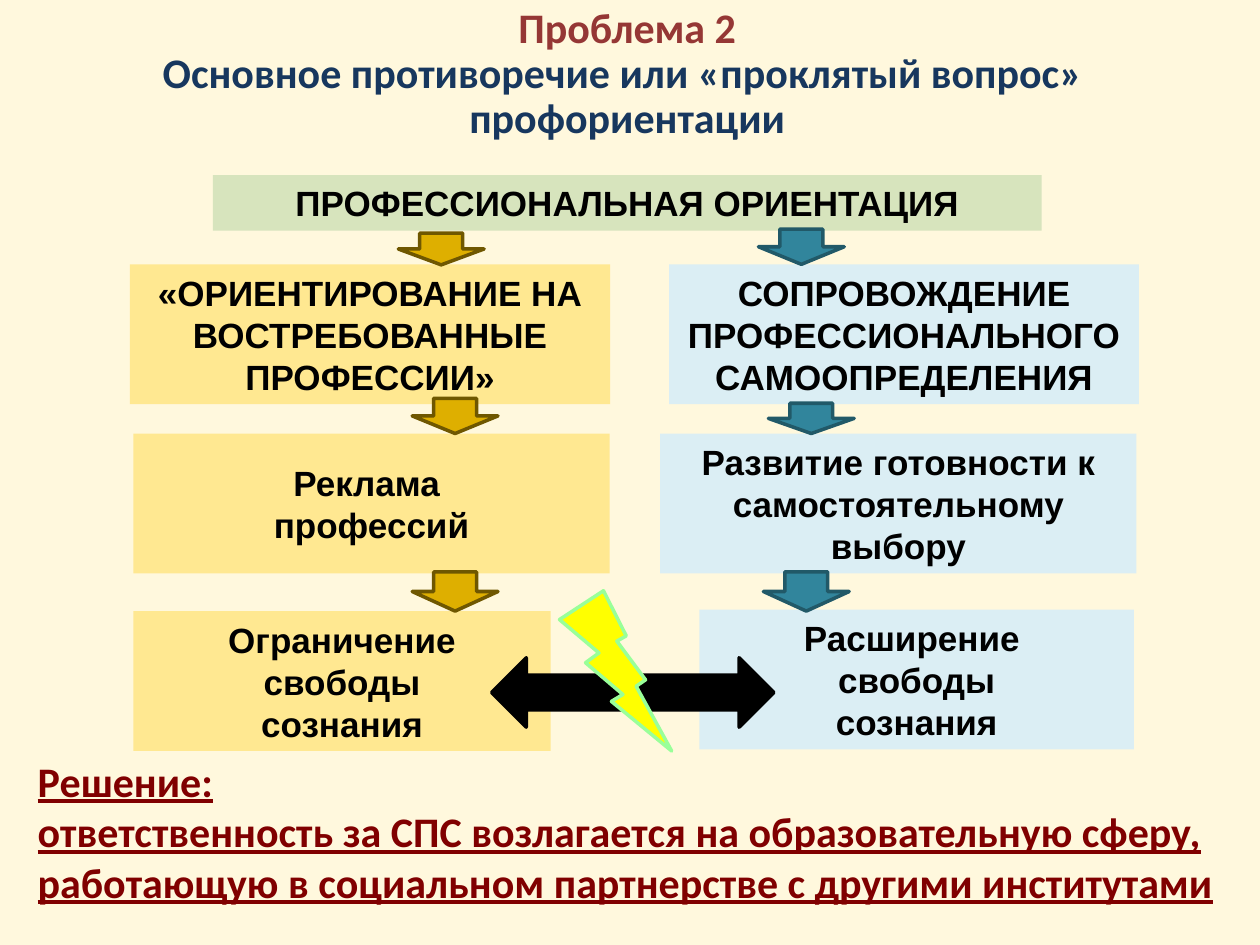
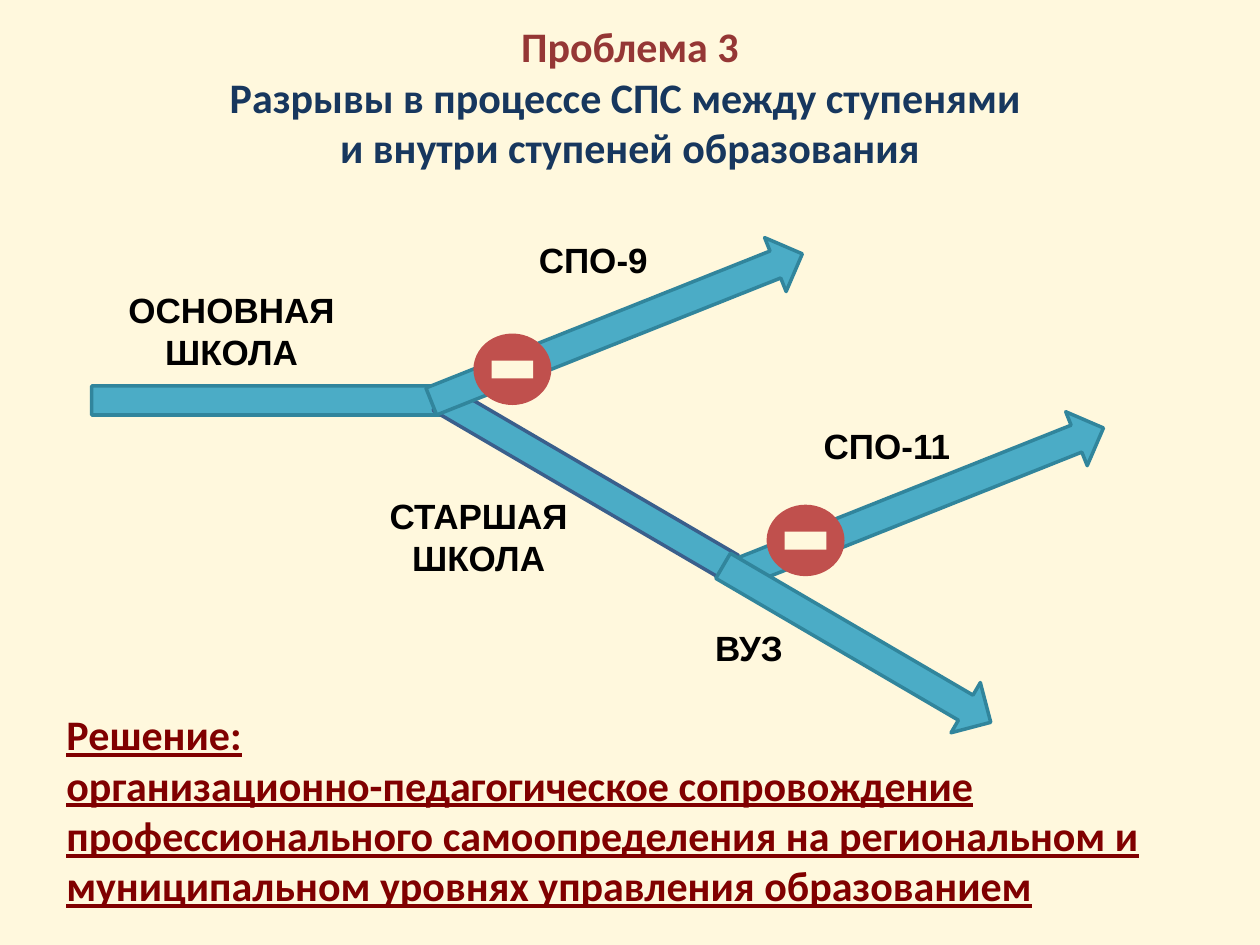
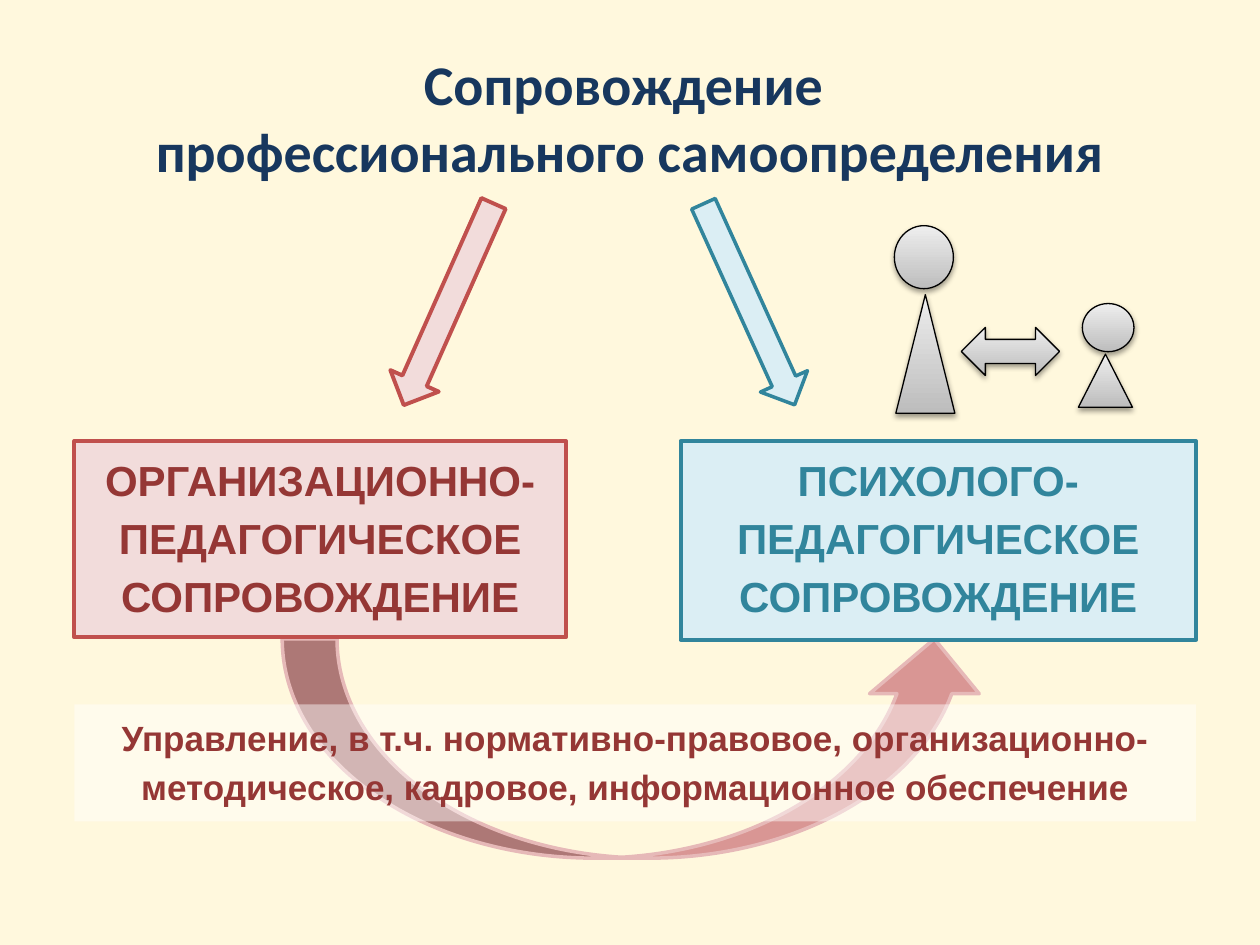
from typing import NamedTuple, Optional

from lxml import etree
from pptx import Presentation
from pptx.dml.color import RGBColor
from pptx.enum.shapes import MSO_SHAPE
from pptx.enum.text import MSO_ANCHOR, MSO_AUTO_SIZE, PP_ALIGN
from pptx.oxml.ns import qn
from pptx.util import Cm, Pt

RECT, OVAL, TRIANGLE = MSO_SHAPE.RECTANGLE, MSO_SHAPE.OVAL, MSO_SHAPE.ISOSCELES_TRIANGLE
DOWN, RIGHT = MSO_SHAPE.DOWN_ARROW, MSO_SHAPE.RIGHT_ARROW
LEFT_RIGHT, CURVED_UP = MSO_SHAPE.LEFT_RIGHT_ARROW, MSO_SHAPE.CURVED_UP_ARROW
BOLT = MSO_SHAPE.LIGHTNING_BOLT
CENTER, LEFT = PP_ALIGN.CENTER, PP_ALIGN.LEFT
MIDDLE, TOP = MSO_ANCHOR.MIDDLE, MSO_ANCHOR.TOP

COLORS = {
    "background": "FFF8DD", "black": "000000", "white": "FFFFFF",
    "problem": "953735", "title": "17375E", "solution": "800000",
    "green": "D7E4BD", "yellow": "FFE891", "pale_blue": "DBEEF4",
    "gold": "DEAF00", "dark_gold": "6F5700",
    "teal": "31859C", "dark_teal": "215968",
    "bolt": "FFFF00", "bolt_edge": "99FF99",
    "route": "4BACC6", "school_edge": "3A5F8C",
    "red": "C0504D", "pink": "F2DCDB", "rose": "D99694", "rose_edge": "E6B9B8",
    "grey_dark": "BDBDBD", "grey_light": "EEEEEE",
}


class Box(NamedTuple):
    """Position and size in centimetres."""
    left: float
    top: float
    width: float
    height: float


class Figure(NamedTuple):
    kind: int
    box: Box
    fill: str
    line: Optional[str] = None
    weight: float = 2
    rotation: float = 0


class Label(NamedTuple):
    box: Box
    lines: tuple
    fill: Optional[str] = None


def rgb(name: str) -> RGBColor:
    return RGBColor.from_string(COLORS[name])


def place(sp, box: Box) -> None:
    sp.left, sp.top, sp.width, sp.height = (Cm(v) for v in box)


def draw(slide, fig: Figure):
    sp = slide.shapes.add_shape(fig.kind, *(Cm(v) for v in fig.box))
    sp.shadow.inherit = False
    sp.rotation = fig.rotation
    sp.fill.solid()
    sp.fill.fore_color.rgb = rgb(fig.fill)
    if fig.line:
        sp.line.color.rgb = rgb(fig.line)
        sp.line.width = Pt(fig.weight)
    else:
        sp.line.fill.background()
    return sp


def write(sp, lines: tuple, size: float, color: str, font: str = "Arial",
          align=CENTER, anchor=MIDDLE, spacing: float = 1, underline: bool = False) -> None:
    """Fill a shape with bold paragraphs of one style."""
    tf = sp.text_frame
    tf.word_wrap = True
    tf.vertical_anchor = anchor
    for i, line in enumerate(lines):
        p = tf.add_paragraph() if i else tf.paragraphs[0]
        p.text = line
        p.alignment = align
        p.line_spacing = spacing
        p.font.name, p.font.size, p.font.bold = font, Pt(size), True
        p.font.underline = underline
        p.font.color.rgb = rgb(color)


def add_label(slide, label: Label) -> None:
    if label.fill:
        sp = draw(slide, Figure(RECT, label.box, label.fill))
    else:
        sp = slide.shapes.add_textbox(*(Cm(v) for v in label.box))
    write(sp, label.lines, 20, "black")


def new_slide(prs, box: Box, size: float, lines: tuple, spacing: float = 1):
    """Add a slide whose title is a tuple of (text, colour) lines."""
    slide = prs.slides.add_slide(prs.slide_layouts[5])
    sp = slide.shapes.title
    place(sp, box)
    tf = sp.text_frame
    tf.auto_size = MSO_AUTO_SIZE.NONE
    tf.vertical_anchor = MIDDLE
    p = tf.paragraphs[0]
    p.alignment = CENTER
    p.line_spacing = spacing
    p.font.name, p.font.size, p.font.bold = "Calibri", Pt(size), True
    for i, (text, color) in enumerate(lines):
        if i:
            p.add_line_break()
        r = p.add_run()
        r.text = text
        r.font.color.rgb = rgb(color)
    return slide


def add_solution(slide, box: Box, text: str) -> None:
    sp = slide.shapes.add_textbox(*(Cm(v) for v in box))
    write(sp, ("Решение:", text), 24, "solution", "Calibri", LEFT, underline=True)


def add_no_entry(slide, left: float, top: float) -> None:
    draw(slide, Figure(OVAL, Box(left, top, 1.5, 1.37), "red", "red"))
    draw(slide, Figure(RECT, Box(left + 0.33, top + 0.51, 0.84, 0.36), "background"))


def add_grey_figure(slide, kind: int, box: Box) -> None:
    """Draw a shape with a grey gradient and a soft shadow below."""
    sp = draw(slide, Figure(kind, box, "grey_dark", "black", 0.75))
    sp.fill.gradient()
    sp.fill.gradient_angle = 90
    for stop, color in zip(sp.fill.gradient_stops, ("grey_dark", "grey_light")):
        stop.color.rgb = rgb(color)
    effects = sp._element.spPr.find(qn("a:effectLst"))
    shadow = etree.SubElement(effects, qn("a:outerShdw"), blurRad="40000",
                              dist="20000", dir="5400000", rotWithShape="0")
    color = etree.SubElement(shadow, qn("a:srgbClr"), val=COLORS["black"])
    etree.SubElement(color, qn("a:alpha"), val="38000")


def set_opacity(sp, percent: int) -> None:
    color = sp._element.spPr.find(qn("a:solidFill"))[0]
    etree.SubElement(color, qn("a:alpha"), val=str(percent * 1000))


def build_contradiction(prs) -> None:
    slide = new_slide(prs, Box(-0.51, -0.08, 26.31, 3.18), 24, (
        ("Проблема 2", "problem"),
        ("Основное противоречие или «проклятый вопрос» ", "title"),
        ("профориентации", "title")), 0.9)
    h = 2.82
    for label in (
        Label(Box(4.29, 3.53, 16.71, 1.12), ("ПРОФЕССИОНАЛЬНАЯ ОРИЕНТАЦИЯ",), "green"),
        Label(Box(2.62, 5.33, 9.68, h),
              ("«ОРИЕНТИРОВАНИЕ НА ВОСТРЕБОВАННЫЕ ПРОФЕССИИ»",), "yellow"),
        Label(Box(13.49, 5.33, 9.47, h),
              ("СОПРОВОЖДЕНИЕ ПРОФЕССИОНАЛЬНОГО САМООПРЕДЕЛЕНИЯ",), "pale_blue"),
        Label(Box(2.69, 8.74, 9.6, h), ("Реклама ", "профессий"), "yellow"),
        Label(Box(13.31, 8.74, 9.6, h),
              ("Развитие готовности к самостоятельному выбору",), "pale_blue"),
        Label(Box(2.69, 12.32, 8.41, h), ("Ограничение свободы", "сознания"), "yellow"),
        Label(Box(14.1, 12.29, 8.76, h),
              ("Расширение ", "свободы", "сознания"), "pale_blue"),
    ):
        add_label(slide, label)

    steps = {
        ("gold", "dark_gold"): ((8.03, 4.7, 0.64), (8.31, 8.03, 0.71), (8.31, 11.53, 0.79)),
        ("teal", "dark_teal"): ((15.29, 4.62, 0.71), (15.49, 8.13, 0.61), (15.39, 11.53, 0.79)),
    }
    for (fill, line), arrows in steps.items():
        for left, top, height in arrows:
            draw(slide, Figure(DOWN, Box(left, top, 1.73, height), fill, line))

    draw(slide, Figure(LEFT_RIGHT, Box(9.91, 13.26, 5.69, 1.4), "black", "black"))
    draw(slide, Figure(BOLT, Box(11.28, 11.91, 2.26, 3.23), "bolt", "bolt_edge"))
    add_solution(slide, Box(0.51, 15.16, 24.41, 3.18),
                 "ответственность за СПС возлагается на образовательную сферу, "
                 "работающую в социальном партнерстве с другими институтами")


def build_gaps(prs) -> None:
    slide = new_slide(prs, Box(0, 0.71, 25.4, 2.46), 24, (
        ("Проблема 3", "problem"),
        ("Разрывы в процессе СПС между ступенями ", "title"),
        ("и внутри ступеней образования", "title")))
    length, thick, up, down = 8.05, 1.17, 338.3, 30.3
    for fig in (
        Figure(RIGHT, Box(1.85, 7.49, length, thick), "route", "teal"),
        Figure(RECT, Box(9.07, 7.26, 1.27, 1.6), "background"),
        Figure(RIGHT, Box(8.33, 9.47, length, thick), "route", "school_edge", rotation=down),
        Figure(RIGHT, Box(8.41, 6.02, length, thick), "route", "teal", rotation=up),
        Figure(RECT, Box(14.91, 10.97, 1.27, 1.6), "background"),
        Figure(RIGHT, Box(14.48, 9.53, length, thick), "route", "teal", rotation=up),
        Figure(RIGHT, Box(14.15, 12.4, 6.25, thick), "route", "teal", rotation=down),
    ):
        draw(slide, fig)
    for label in (
        Label(Box(2.13, 5.77, 5.08, 1.8), ("ОСНОВНАЯ ШКОЛА",)),
        Label(Box(7.11, 9.91, 5.08, 1.8), ("СТАРШАЯ ШКОЛА",)),
        Label(Box(9.42, 4.72, 5.08, 1.02), ("СПО-9",)),
        Label(Box(15.34, 8.48, 5.08, 1.02), ("СПО-11",)),
        Label(Box(13.74, 12.55, 2.72, 1.02), ("ВУЗ",)),
    ):
        add_label(slide, label)
    add_no_entry(slide, 9.58, 6.76)
    add_no_entry(slide, 15.49, 10.21)
    add_solution(slide, Box(1.09, 14.73, 23.8, 3.18),
                 "организационно-педагогическое сопровождение профессионального "
                 "самоопределения на региональном и муниципальном уровнях "
                 "управления образованием")


def build_support(prs) -> None:
    slide = new_slide(prs, Box(1.27, 0.76, 22.86, 3.18), 32, (
        ("Сопровождение ", "title"), ("профессионального самоопределения", "title")))
    draw(slide, Figure(CURVED_UP, Box(5.69, 12.88, 14.25, 4.42), "rose", "rose_edge"))

    organisation = draw(slide, Figure(RECT, Box(1.5, 8.89, 9.91, 3.96), "pink", "red", 2.25))
    write(organisation, ("ОРГАНИЗАЦИОННО-ПЕДАГОГИЧЕСКОЕ СОПРОВОЖДЕНИЕ",), 24, "problem",
          anchor=TOP, spacing=1.15)
    psychology = draw(slide, Figure(RECT, Box(13.72, 8.89, 10.39, 4.01),
                                    "pale_blue", "teal", 2.25))
    write(psychology, ("ПСИХОЛОГО-ПЕДАГОГИЧЕСКОЕ СОПРОВОЖДЕНИЕ",), 24, "teal",
          anchor=TOP, spacing=1.15)
    management = draw(slide, Figure(RECT, Box(1.5, 14.2, 22.61, 2.36), "white"))
    set_opacity(management, 46)
    write(management, ("Управление, в т.ч. нормативно-правовое, организационно-методическое, "
                       "кадровое, информационное обеспечение",), 20, "problem",
          anchor=TOP, spacing=1.15)

    draw(slide, Figure(DOWN, Box(8.51, 3.91, 1.07, 4.45), "pink", "red", 2.25, 24))
    draw(slide, Figure(DOWN, Box(14.58, 3.91, 1.04, 4.45), "pale_blue", "teal", 2, 335.6))
    for kind, box in (
        (TRIANGLE, Box(18.06, 5.94, 1.19, 2.39)),
        (OVAL, Box(21.82, 6.12, 1.04, 0.97)),
        (OVAL, Box(18.03, 4.55, 1.19, 1.27)),
        (TRIANGLE, Box(21.74, 7.14, 1.09, 1.07)),
        (LEFT_RIGHT, Box(19.38, 6.6, 1.98, 0.97)),
    ):
        add_grey_figure(slide, kind, box)


def main() -> None:
    prs = Presentation()
    prs.slide_width, prs.slide_height = Cm(25.4), Cm(19.05)
    background = prs.slide_master.background.fill
    background.solid()
    background.fore_color.rgb = rgb("background")
    build_contradiction(prs)
    build_gaps(prs)
    build_support(prs)
    prs.save("out.pptx")


if __name__ == "__main__":
    main()
